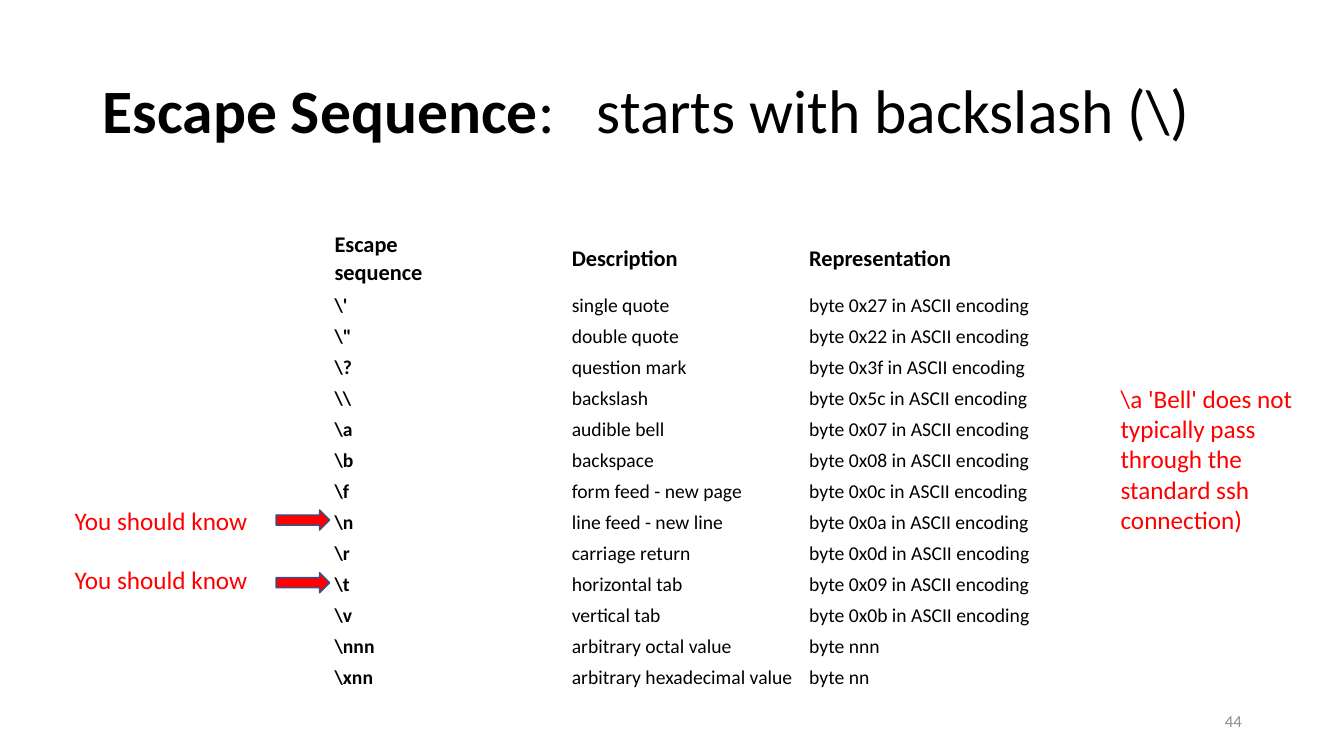
"""Build a slide with a table of C escape sequences and notes beside it."""
from pptx import Presentation
from pptx import util as u
from pptx.dml.color import RGBColor
from pptx.enum import shapes, text
from pptx.oxml import parse_xml
from pptx.oxml.ns import nsdecls

COLORS = {"black": "000000", "red": "FF0000", "outline": "325491", "gray": "8C8C8C"}
HEADINGS = ("Escape\nsequence", "Description", "Representation")
ESCAPES = [
    (r"\'", "single quote", "byte 0x27 in ASCII encoding"),
    (r'\"', "double quote", "byte 0x22 in ASCII encoding"),
    (r"\?", "question mark", "byte 0x3f in ASCII encoding"),
    (r"\\", "backslash", "byte 0x5c in ASCII encoding"),
    (r"\a", "audible bell", "byte 0x07 in ASCII encoding"),
    (r"\b", "backspace", "byte 0x08 in ASCII encoding"),
    (r"\f", "form feed - new page", "byte 0x0c in ASCII encoding"),
    (r"\n", "line feed - new line", "byte 0x0a in ASCII encoding"),
    (r"\r", "carriage return", "byte 0x0d in ASCII encoding"),
    (r"\t", "horizontal tab", "byte 0x09 in ASCII encoding"),
    (r"\v", "vertical tab", "byte 0x0b in ASCII encoding"),
    (r"\nnn", "arbitrary octal value", "byte nnn"),
    (r"\xnn", "arbitrary hexadecimal value", "byte nn"),
]


def format_runs(paragraph, size, color, bold=False):
    for run in paragraph.runs:
        run.font.name = "Calibri"
        run.font.size = u.Pt(size)
        run.font.bold = bold
        run.font.color.rgb = RGBColor.from_string(COLORS[color])


def add_text(left, top, width, height, content, size, color, anchor=text.MSO_ANCHOR.TOP):
    box = slide.shapes.add_textbox(u.Cm(left), u.Cm(top), u.Cm(width), u.Cm(height))
    box.text_frame.word_wrap = True
    box.text_frame.vertical_anchor = anchor
    paragraph = box.text_frame.paragraphs[0]
    paragraph.text = content
    format_runs(paragraph, size, color)
    return paragraph


presentation = Presentation()
presentation.slide_width, presentation.slide_height = u.Cm(33.87), u.Cm(19.05)
slide = presentation.slides.add_slide(presentation.slide_layouts[6])

title = add_text(2.34, 1.02, 29.21, 3.68, "Escape Sequence", 44, "black", text.MSO_ANCHOR.MIDDLE)
title.add_run().text = ":\tstarts with backslash (\\)"
format_runs(title, 44, "black")
title.runs[0].font.bold = True
title.line_spacing = 0.9
tab_stops = parse_xml(f'<a:tabLst {nsdecls("a")}><a:tab pos="{u.Cm(12.45)}" algn="l"/></a:tabLst>')
title._p.get_or_add_pPr().append(tab_stops)

rows = [HEADINGS, *ESCAPES]
table = slide.shapes.add_table(
    len(rows), len(HEADINGS), u.Cm(8.31), u.Cm(5.72), u.Cm(17.93), u.Cm(11.74)
).table
table.first_row = table.horz_banding = False
table._tbl.tblPr[0].text = "{2D5ABB26-0587-4C30-8999-92F81FD0307C}"
for column in table.columns:
    column.width = u.Cm(5.98)
for row_index, row in enumerate(rows):
    is_heading = row_index == 0
    table.rows[row_index].height = u.Cm(1.6 if is_heading else 0.78)
    for column_index, content in enumerate(row):
        cell = table.cell(row_index, column_index)
        cell.fill.background()
        cell.vertical_anchor = text.MSO_ANCHOR.MIDDLE
        cell.margin_left = cell.margin_right = u.Cm(0.12)
        cell.margin_top = cell.margin_bottom = u.Cm(0.06)
        paragraph = cell.text_frame.paragraphs[0]
        paragraph.text = content
        format_runs(paragraph, 16 if is_heading else 14, "black", is_heading or column_index == 0)

add_text(27.99, 9.53, 4.88, 4.1,
         r"\a 'Bell' does not typically pass through the standard ssh connection)", 18, "red")

for label_top, arrow_top in ((12.6, 12.85), (14.1, 14.43)):
    add_text(1.63, label_top, 5.33, 1.02, "You should know", 18, "red")
    arrow = slide.shapes.add_shape(
        shapes.MSO_SHAPE.RIGHT_ARROW, u.Cm(6.96), u.Cm(arrow_top), u.Cm(1.35), u.Cm(0.51)
    )
    arrow.shadow.inherit = False
    arrow.fill.solid()
    arrow.fill.fore_color.rgb = RGBColor.from_string(COLORS["red"])
    arrow.line.color.rgb = RGBColor.from_string(COLORS["outline"])
    arrow.line.width = u.Pt(1)

page_number = add_text(23.93, 17.65, 7.62, 1.02, "44", 12, "gray", text.MSO_ANCHOR.MIDDLE)
page_number.alignment = text.PP_ALIGN.RIGHT

presentation.save("out.pptx")
